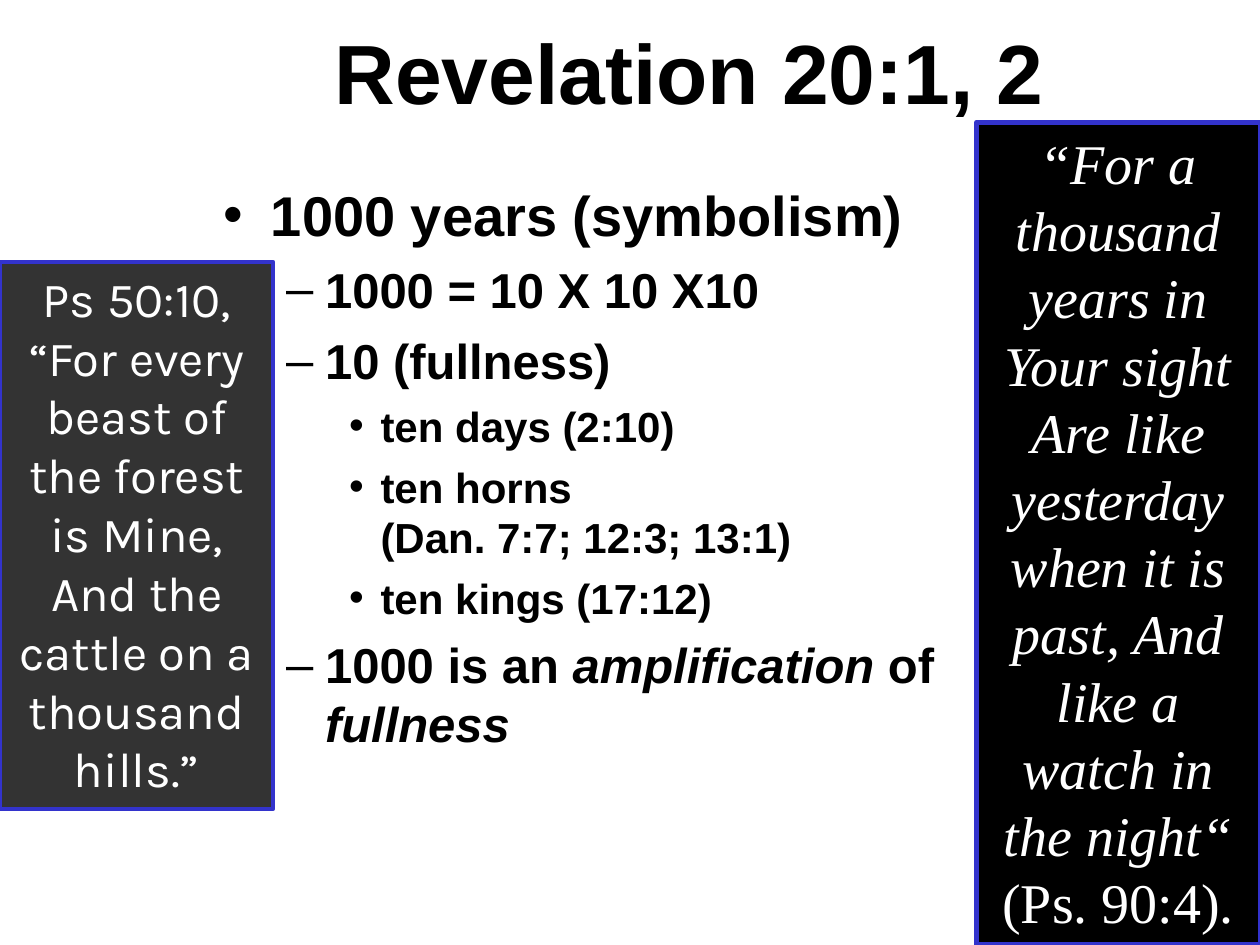
from lxml import etree
from pptx import Presentation
from pptx.dml.color import RGBColor
from pptx.enum.shapes import MSO_SHAPE
from pptx.enum.text import MSO_ANCHOR, PP_ALIGN
from pptx.oxml.ns import qn
from pptx.util import Inches, Pt

BLACK = RGBColor(0x00, 0x00, 0x00)
WHITE = RGBColor(0xFF, 0xFF, 0xFF)
BLUE = RGBColor(0x33, 0x33, 0xCC)

# outline level: (font size, left indent, hanging indent, bullet)
LEVELS = [
    (32, 0.38, 0.38, "•"),
    (28, 0.81, 0.31, "–"),
    (24, 1.25, 0.25, "•"),
]

# (level, runs), each run being (text, italic)
OUTLINE = [
    (0, [("1000 years (symbolism)", False)]),
    (1, [("1000 = 10 X 10 X10", False)]),
    (1, [("10 (fullness)", False)]),
    (2, [("ten days (2:10)", False)]),
    (2, [("ten horns\v(Dan. 7:7; 12:3; 13:1)", False)]),
    (2, [("ten kings (17:12)", False)]),
    (1, [("1000 is an ", False), ("amplification", True), (" of ", False), ("fullness", True)]),
]

PSALM_90 = [
    ("“For a thousand years in Your sight Are like yesterday when it is past, "
     "And like a watch in the night“", True),
    (" (Ps. 90:4).", False),
]
PSALM_50 = [
    ("Ps 50:10, “For every beast of the forest is Mine, And the cattle on a "
     "thousand hills.”", False),
]


def place(shape, box):
    shape.left, shape.top, shape.width, shape.height = (Inches(side) for side in box)


def add_run(paragraph, text, font_name, size, color, bold=False, italic=False):
    """Add one formatted run; a vertical tab in the text breaks the line."""
    for index, line in enumerate(text.split("\v")):
        if index:
            paragraph.add_line_break()
        run = paragraph.add_run()
        run.text = line
        font = run.font
        font.name, font.size, font.bold, font.italic = font_name, Pt(size), bold, italic
        font.color.rgb = color


def set_bullet(paragraph, level):
    _, indent, hanging, bullet = LEVELS[level]
    properties = paragraph._p.get_or_add_pPr()
    properties.set("marL", str(Inches(indent)))
    properties.set("indent", str(-Inches(hanging)))
    etree.SubElement(properties, qn("a:buFont")).set("typeface", "Arial")
    etree.SubElement(properties, qn("a:buChar")).set("char", bullet)


def fill_title(title, box):
    place(title, box)
    frame = title.text_frame
    frame.vertical_anchor = MSO_ANCHOR.MIDDLE
    heading = frame.paragraphs[0]
    heading.alignment = PP_ALIGN.CENTER
    add_run(heading, "Revelation 20:1, 2", "Arial", 48, BLACK, bold=True)


def fill_outline(body, box):
    place(body, box)
    frame = body.text_frame
    frame.vertical_anchor = MSO_ANCHOR.TOP
    frame.margin_top = Inches(0.1)
    for index, (level, runs) in enumerate(OUTLINE):
        item = frame.add_paragraph() if index else frame.paragraphs[0]
        size = LEVELS[level][0]
        item.level = level
        item.space_before = Pt(size / 4 if index else 0)
        set_bullet(item, level)
        for text, italic in runs:
            add_run(item, text, "Arial", size, BLACK, bold=True, italic=italic)


def add_quote(slide, box, runs, font_name, size, line_width, opacity=100):
    """Add a framed scripture quotation on a dark panel."""
    panel = slide.shapes.add_shape(MSO_SHAPE.RECTANGLE, *(Inches(side) for side in box))
    panel.shadow.inherit = False
    panel.fill.solid()
    panel.fill.fore_color.rgb = BLACK
    if opacity < 100:
        color = panel.fill._xPr.find(qn("a:solidFill"))[0]
        etree.SubElement(color, qn("a:alpha")).set("val", str(opacity * 1000))
    panel.line.color.rgb = BLUE
    panel.line.width = Pt(line_width)
    frame = panel.text_frame
    frame.word_wrap = True
    frame.vertical_anchor = MSO_ANCHOR.TOP
    quote = frame.paragraphs[0]
    quote.alignment = PP_ALIGN.CENTER
    for text, italic in runs:
        add_run(quote, text, font_name, size, WHITE, italic=italic)


def main():
    presentation = Presentation()
    presentation.slide_width, presentation.slide_height = Inches(10), Inches(7.5)
    slide = presentation.slides.add_slide(presentation.slide_layouts[1])
    fill_title(slide.shapes.title, (1.77, 0, 7.4, 1.12))
    fill_outline(slide.placeholders[1], (1.67, 1.33, 5.92, 6.17))
    add_quote(slide, (7.75, 0.97, 2.25, 6.53), PSALM_90, "Times New Roman", 32, 2.75)
    add_quote(slide, (0, 2.08, 2.17, 4.34), PSALM_50, "Karla", 28, 2.25, opacity=80)
    presentation.save("out.pptx")


if __name__ == "__main__":
    main()
